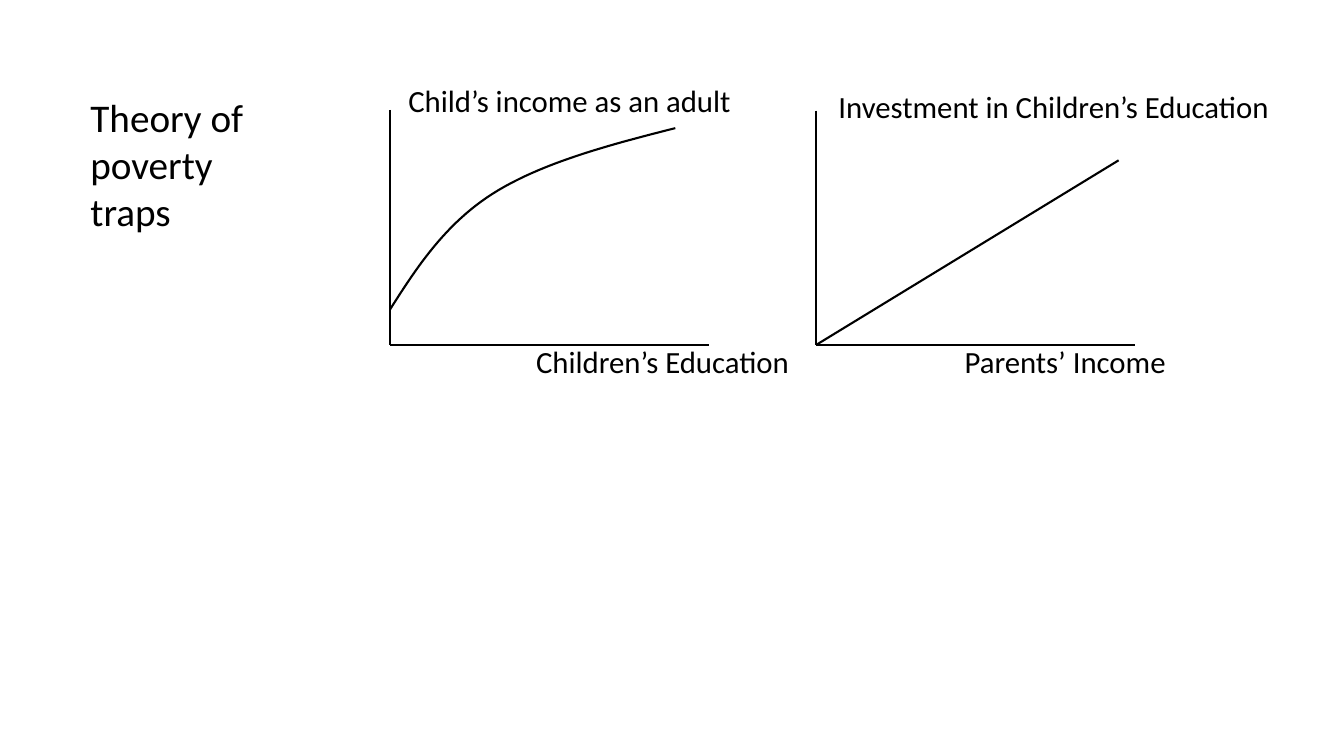
from lxml import etree
from pptx import Presentation
from pptx import util as u
from pptx.dml.color import RGBColor
from pptx.enum import shapes, text
from pptx.oxml.ns import qn

BLACK = RGBColor(0x00, 0x00, 0x00)
FONT = "Calibri"
AXIS_LENGTH = 8.03
BASELINE = 8.69

presentation = Presentation()
presentation.slide_width = u.Cm(33.87)
presentation.slide_height = u.Cm(19.05)
slide = presentation.slides.add_slide(presentation.slide_layouts[6])


def add_line(start, end, width):
    line = slide.shapes.add_connector(
        shapes.MSO_CONNECTOR.STRAIGHT, *(u.Cm(value) for value in start + end))
    line.line.color.rgb = BLACK
    line.line.width = u.Pt(width)
    etree.SubElement(line._element.spPr, qn("a:effectLst"))


def add_text(words, left, top, width, height, size, inset=(0, 0), wrap=False):
    box = slide.shapes.add_textbox(*(u.Cm(value) for value in (left, top, width, height)))
    frame = box.text_frame
    frame.margin_left = frame.margin_right = u.Cm(inset[0])
    frame.margin_top = frame.margin_bottom = u.Cm(inset[1])
    frame.word_wrap = wrap
    frame.auto_size = text.MSO_AUTO_SIZE.SHAPE_TO_FIT_TEXT
    run = frame.paragraphs[0].add_run()
    run.text = words
    run.font.name = FONT
    run.font.size = u.Pt(size)
    run.font.color.rgb = BLACK


# Axes of both graphs
for origin, top in ((9.83, 2.77), (20.57, 2.79)):
    add_line((origin, top), (origin, BASELINE), 1.25)
    add_line((origin, BASELINE), (origin + AXIS_LENGTH, BASELINE), 1.25)

# Investment rises in proportion to income
add_line((20.57, BASELINE), (28.19, 4.04), 1.5)

# Returns to education diminish: two Bezier arcs sampled as short segments
arcs = (
    ((9.83, 7.8), (10.52, 6.71), (11.23, 5.64), (12.42, 4.88)),
    ((12.42, 4.88), (13.64, 4.11), (15.32, 3.66), (17.02, 3.23)),
)
STEPS = 24
curve_points = []
for arc in arcs:
    for step in range(1, STEPS + 1):
        t = step / STEPS
        weights = ((1 - t) ** 3, 3 * t * (1 - t) ** 2, 3 * t ** 2 * (1 - t), t ** 3)
        x, y = (sum(w * value for w, value in zip(weights, axis)) for axis in zip(*arc))
        curve_points.append((u.Cm(x), u.Cm(y)))
start_x, start_y = arcs[0][0]
builder = slide.shapes.build_freeform(u.Cm(start_x), u.Cm(start_y))
builder.add_line_segments(curve_points, close=False)
curve = builder.convert_to_shape()
curve.shadow.inherit = False
curve.fill.background()
curve.line.color.rgb = BLACK
curve.line.width = u.Pt(1.5)

# Title
add_text("Theory of poverty traps", 2.03, 2.21, 5.38, 3.84, 28, (0.25, 0.13), True)

# Axis labels
for words, left, top, width in (
    ("Child’s income as an adult", 10.29, 2.06, 8.2),
    ("Children’s Education", 13.51, 8.64, 6.43),
    ("Investment in Children’s Education", 21.13, 2.21, 10.95),
    ("Parents’ Income", 24.31, 8.64, 5.13),
):
    add_text(words, left, top, width, 0.94, 22)

presentation.save("out.pptx")
